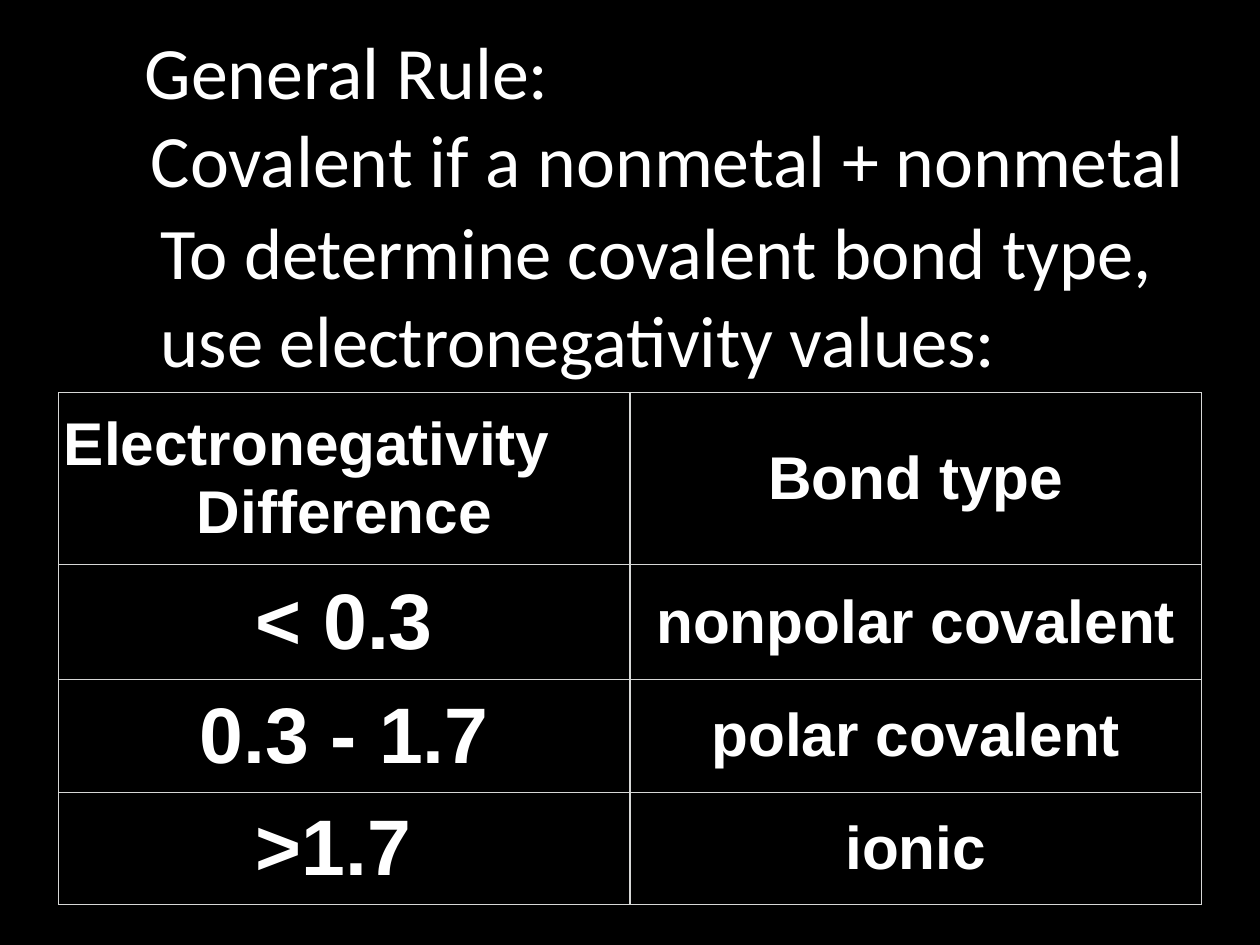
import pptx
import pptx.dml.color
import pptx.enum.text
import pptx.oxml
import pptx.oxml.ns
import pptx.util

Pt = pptx.util.Pt
Align = pptx.enum.text.PP_ALIGN
Anchor = pptx.enum.text.MSO_ANCHOR

WHITE, BLACK, GREY = "FFFFFF", "000000", "D6D7D6"


def color(code):
    return pptx.dml.color.RGBColor.from_string(code)


def write(par, text, font="Calibri", size=60, bold=False, align=Align.LEFT, indent=0):
    """Fill one paragraph with formatted text."""
    par.alignment = align
    if indent:
        props = par._p.get_or_add_pPr()
        props.set("marL", str(Pt(indent)))
        props.set("indent", "0")
    run = par.add_run()
    run.text = text
    run.font.name = font
    run.font.size = Pt(size)
    run.font.bold = bold
    run.font.color.rgb = color(WHITE)


class Page:
    inset = 4.5
    rule = 1

    def __init__(self, deck):
        self.slide = deck.slides.add_slide(deck.slide_layouts[6])
        fill = self.slide.background.fill
        fill.solid()
        fill.fore_color.rgb = color(BLACK)

    def pad(self, item):
        """Set equal margins on a text frame or a cell."""
        for side in ("left", "top", "right", "bottom"):
            setattr(item, f"margin_{side}", Pt(self.inset))

    def text(self, box, lines):
        """Add a text box; lines are pairs of text and format."""
        frame = self.slide.shapes.add_textbox(*map(Pt, box)).text_frame
        frame.word_wrap = True
        self.pad(frame)
        self.fill(frame, lines)

    def fill(self, frame, lines):
        for i, (words, style) in enumerate(lines):
            par = frame.add_paragraph() if i else frame.paragraphs[0]
            write(par, words, **style)

    def border(self, cell):
        props = cell._tc.get_or_add_tcPr()
        space = pptx.oxml.ns.nsdecls("a")
        for side in "LRTB":
            props.append(pptx.oxml.parse_xml(
                f'<a:ln{side} {space} w="{Pt(self.rule)}"><a:solidFill>'
                f'<a:srgbClr val="{GREY}"/></a:solidFill></a:ln{side}>'))

    def table(self, left, top, width, heights, rows):
        """Add a table; each cell is a list of pairs of text and format."""
        count = len(rows[0])
        grid = self.slide.shapes.add_table(
            len(rows), count, Pt(left), Pt(top),
            Pt(width * count), Pt(sum(heights))).table
        grid.first_row = grid.horz_banding = False
        for col in grid.columns:
            col.width = Pt(width)
        for r, row in enumerate(rows):
            grid.rows[r].height = Pt(heights[r])
            for c, lines in enumerate(row):
                cell = grid.cell(r, c)
                self.pad(cell)
                cell.vertical_anchor = Anchor.MIDDLE
                self.border(cell)
                cell.fill.solid()
                cell.fill.fore_color.rgb = color(BLACK)
                self.fill(cell.text_frame, lines)


def main():
    deck = pptx.Presentation()
    deck.slide_width, deck.slide_height = Pt(1024), Pt(768)
    page = Page(deck)

    page.text((126, 164, 844, 190), [
        ("To determine covalent bond type, use electronegativity values:",
         {"size": 59})])

    label = {"font": "Arial", "size": 49, "bold": True, "align": Align.CENTER}
    value = {**label, "size": 64}
    bonds = [("< 0.3", "nonpolar covalent"),
             ("0.3 - 1.7", "polar covalent"),
             (">1.7 ", "ionic")]
    head = [[("Electronegativity", {**label, "align": Align.LEFT}),
             ("Difference", label)],
            [("Bond type", label)]]
    body = [[[(gap, value)], [(bond, label)]] for gap, bond in bonds]
    page.table(47.5, 319, 464.5, (140, 93.5, 91.5, 91.5), [head, *body])

    page.text((74, 16, 940, 190), [
        ("General Rule:", {"indent": 39}),
        ("Covalent if a nonmetal + nonmetal", {"indent": 44})])

    deck.save("out.pptx")


if __name__ == "__main__":
    main()
